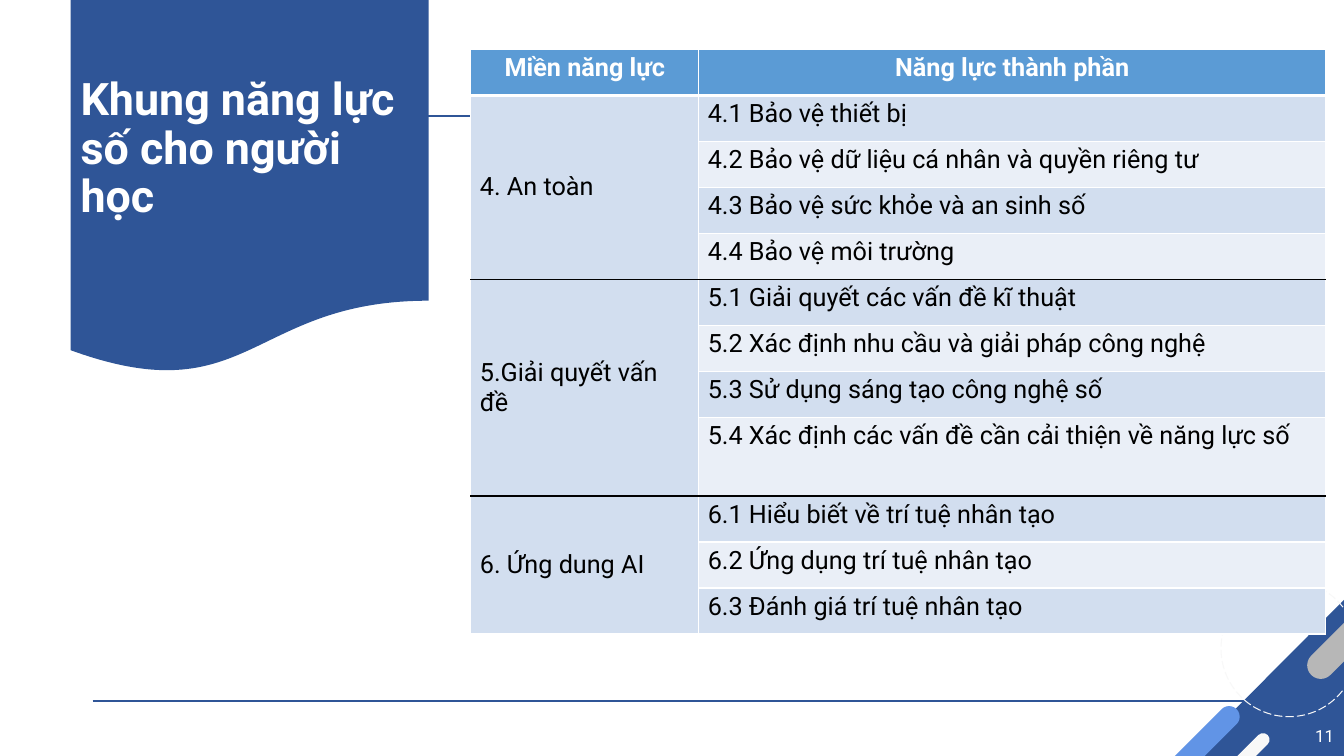
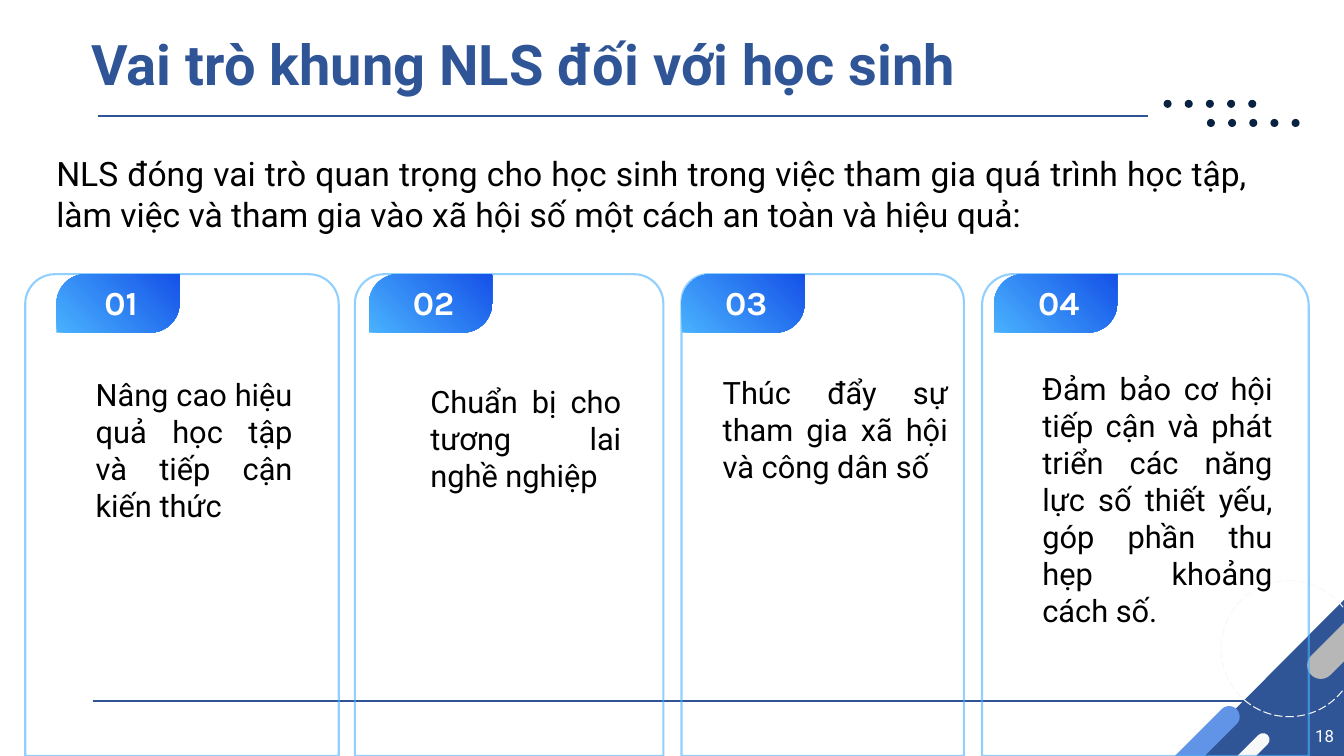
from lxml.etree import SubElement
from pptx import Presentation
from pptx.dml.color import RGBColor
from pptx.enum.dml import MSO_LINE
from pptx.enum.shapes import MSO_CONNECTOR, MSO_SHAPE
from pptx.enum.text import MSO_ANCHOR as ANCHOR, PP_ALIGN as ALIGN
from pptx.oxml.ns import qn
from pptx.util import Inches, Pt

COLORS = {
    "navy": "2F5597", "gray": "B7B7B7", "pale": "F8F8F8", "light_blue": "6194E6",
    "dot": "092241", "sky": "49B2FE", "royal": "1552E8", "white": "FFFFFF",
    "black": "000000", "header": "5B9BD5", "odd_row": "D2DEEF", "even_row": "EAEFF7",
}


def add_shape(slide, preset, box, fill=None, rotation=0, adjustments=()):
    shape = slide.shapes.add_shape(preset, *map(Inches, box))
    shape.shadow.inherit = False
    shape.rotation = rotation
    shape.line.fill.background()
    for index, value in enumerate(adjustments):
        shape.adjustments[index] = value
    if fill:
        shape.fill.solid()
        shape.fill.fore_color.rgb = RGBColor.from_string(COLORS[fill])
    else:
        shape.fill.background()
    return shape


def add_text(slide, text, box, size, color="black", bold=False, align=ALIGN.LEFT,
             anchor=ANCHOR.TOP, font="Roboto"):
    frame = slide.shapes.add_textbox(*map(Inches, box)).text_frame
    frame.word_wrap = True
    frame.vertical_anchor = anchor
    paragraph = frame.paragraphs[0]
    paragraph.text = text
    paragraph.alignment = align
    paragraph.font.name = font
    paragraph.font.size = Pt(size)
    paragraph.font.bold = bold
    paragraph.font.color.rgb = RGBColor.from_string(COLORS[color])
    return paragraph


presentation = Presentation()
presentation.slide_width = Inches(13.33)
presentation.slide_height = Inches(7.5)
layout = presentation.slide_layouts[6]
for placeholder in list(layout.placeholders):
    placeholder.element.getparent().remove(placeholder.element)

framework_slide = presentation.slides.add_slide(layout)
roles_slide = presentation.slides.add_slide(layout)

# Shared decoration: rules, corner and dots, drawn once and moved to the layout
for left, right, top in [(0.92, 12.42, 6.95), (0.97, 11.39, 1.15)]:
    rule = framework_slide.shapes.add_connector(
        MSO_CONNECTOR.STRAIGHT, Inches(left), Inches(top), Inches(right), Inches(top))
    rule.line.color.rgb = RGBColor.from_string(COLORS["navy"])
    rule.line.width = Pt(1.5)
    SubElement(rule.element.spPr, qn("a:effectLst"))

add_shape(framework_slide, MSO_SHAPE.RIGHT_TRIANGLE, (11.77, 5.91, 1.61, 1.6), "navy", 270)
for box, color in [
    ((12.83, 6.14, 1.19, 0.27), "gray"),
    ((11.3, 7.33, 1.13, 0.21), "light_blue"),
    ((11.89, 7.51, 0.8, 0.13), "pale"),
]:
    add_shape(framework_slide, MSO_SHAPE.ROUNDED_RECTANGLE, box, color, 135, [0.5])
ring = add_shape(framework_slide, MSO_SHAPE.OVAL, (12.11, 5.76, 1.35, 1.35), rotation=180)
ring.line.color.rgb = RGBColor.from_string(COLORS["pale"])
ring.line.width = Pt(0.75)
ring.line.dash_style = MSO_LINE.LONG_DASH

for row_left, row_top in [(11.54, 0.99), (11.97, 1.18)]:
    for index in range(5):
        add_shape(framework_slide, MSO_SHAPE.OVAL,
                  (row_left + 0.21 * index, row_top, 0.08, 0.08), "dot")

for shape in list(framework_slide.shapes):
    layout.shapes.element.append(shape.element)

# Page numbers
for slide, number in [(framework_slide, "11"), (roles_slide, "18")]:
    add_text(slide, number, (12.65, 7.1, 0.68, 0.4), 12, "white",
             align=ALIGN.RIGHT, anchor=ANCHOR.MIDDLE)

# Titles
add_shape(framework_slide, MSO_SHAPE.FLOWCHART_DOCUMENT, (0.7, 0, 3.55, 3.72), "navy")
for slide, title, box, size, color in [
    (framework_slide, "Khung năng lực số cho người học", (0.7, 0.19, 3.55, 2.59), 32, "white"),
    (roles_slide, "Vai trò khung NLS đối với học sinh", (0.81, 0.15, 11.5, 1.03), 40, "navy"),
]:
    paragraph = add_text(slide, title, box, size, color, bold=True, anchor=ANCHOR.MIDDLE)
    paragraph.line_spacing = 0.9

# Competence table
DOMAINS = [
    ("4. An toàn", [
        "4.1 Bảo vệ thiết bị",
        "4.2 Bảo vệ dữ liệu cá nhân và quyền riêng tư",
        "4.3 Bảo vệ sức khỏe và an sinh số",
        "4.4 Bảo vệ môi trường",
    ]),
    ("5.Giải quyết vấn đề", [
        "5.1 Giải quyết các vấn đề kĩ thuật",
        "5.2 Xác định nhu cầu và giải pháp công nghệ",
        "5.3 Sử dụng sáng tạo công nghệ số",
        "5.4 Xác định các vấn đề cần cải thiện về năng lực số",
    ]),
    ("6. Ứng dung AI", [
        "6.1 Hiểu biết về trí tuệ nhân tạo",
        "6.2 Ứng dụng trí tuệ nhân tạo",
        "6.3 Đánh giá trí tuệ nhân tạo",
    ]),
]
TABLE_HEIGHT, TALL_ROW, TALL_HEIGHT = 5.8, 8, 0.78
rows = [("Miền năng lực", "Năng lực thành phần")]
domain_spans = []
for domain, skills in DOMAINS:
    domain_spans.append((len(rows), len(rows) + len(skills) - 1))
    rows += [(domain if index == 0 else "", skill) for index, skill in enumerate(skills)]
domain_ends = [last for first, last in domain_spans[:-1]]

table = framework_slide.shapes.add_table(
    len(rows), 2, Inches(4.67), Inches(0.49), Inches(8.48), Inches(TABLE_HEIGHT)).table
for column, width in zip(table.columns, (2.26, 6.22)):
    column.width = Inches(width)
for row in table.rows:
    row.height = Inches((TABLE_HEIGHT - TALL_HEIGHT) / (len(rows) - 1))
table.rows[TALL_ROW].height = Inches(TALL_HEIGHT)

for row_index, texts in enumerate(rows):
    is_header = row_index == 0
    for column_index, text in enumerate(texts):
        cell = table.cell(row_index, column_index)
        cell.margin_left = cell.margin_right = Inches(0.09)
        cell.margin_top = cell.margin_bottom = Inches(0.04)
        if column_index == 0 and not is_header:
            cell.vertical_anchor = ANCHOR.MIDDLE
        paragraph = cell.text_frame.paragraphs[0]
        paragraph.text = text
        paragraph.alignment = ALIGN.CENTER if is_header else ALIGN.LEFT
        paragraph.font.name = "Roboto"
        paragraph.font.size = Pt(18)
        paragraph.font.bold = is_header
        paragraph.font.color.rgb = RGBColor.from_string(COLORS["white" if is_header else "black"])

        # Borders come before the fill in the cell properties
        properties = cell._tc.get_or_add_tcPr()
        top_color = "black" if row_index - 1 in domain_ends else "white"
        bottom_color = "black" if row_index in domain_ends else "white"
        for side, color, width in [
            ("L", "white", 1), ("R", "white", 1),
            ("T", top_color, 3 if row_index == 1 else 1),
            ("B", bottom_color, 3 if is_header else 1),
        ]:
            border = SubElement(properties, qn(f"a:ln{side}"), w=str(Pt(width)))
            border_fill = SubElement(border, qn("a:solidFill"))
            SubElement(border_fill, qn("a:srgbClr"), val=COLORS[color])
        fill = "header" if is_header else "odd_row" if row_index % 2 or column_index == 0 else "even_row"
        cell.fill.solid()
        cell.fill.fore_color.rgb = RGBColor.from_string(COLORS[fill])

for first, last in domain_spans:
    table.cell(first, 0).merge(table.cell(last, 0))

# Introduction to the roles
paragraph = add_text(
    roles_slide,
    "NLS đóng vai trò quan trọng cho học sinh trong việc tham gia quá trình học tập, "
    "làm việc và tham gia vào xã hội số một cách an toàn và hiệu quả:",
    (0.46, 1.47, 12.01, 1.0), 24, align=ALIGN.JUSTIFY)
paragraph.space_before = paragraph.space_after = Pt(6)

# Role cards: card left and width, text box, text
CARDS = [
    (0.25, 3.11, (0.35, 3.68, 2.65, 1.58), "Nâng cao hiệu quả học tập và tiếp cận kiến thức"),
    (3.52, 3.06, (3.67, 3.75, 2.59, 1.21), "Chuẩn bị cho tương lai nghề nghiệp"),
    (6.76, 2.8, (6.57, 3.66, 2.93, 1.21), "Thúc đẩy sự tham gia xã hội và công dân số"),
    (9.74, 3.24, (9.74, 3.62, 2.98, 2.69),
     "Đảm bảo cơ hội tiếp cận và phát triển các năng lực số thiết yếu, "
     "góp phần thu hẹp khoảng cách số."),
]
for index, (left, width, text_box, text) in enumerate(CARDS):
    card = add_shape(roles_slide, MSO_SHAPE.ROUND_2_SAME_RECTANGLE,
                     (left, 2.72, width, 4.78), adjustments=[0.095, 0])
    card.line.color.rgb = RGBColor.from_string(COLORS["sky"])
    card.line.width = Pt(1.5)
    line_color = card.element.spPr.find(qn("a:ln")).find(".//" + qn("a:srgbClr"))
    SubElement(line_color, qn("a:alpha"), val="60000")

    tab_left = 0.56 + 3.1 * index
    tab = add_shape(roles_slide, MSO_SHAPE.ROUND_2_DIAG_RECTANGLE,
                    (tab_left, 2.72, 1.22, 0.58), adjustments=[0.5, 0])
    tab.fill.gradient()
    tab.fill.gradient_angle = 45
    for stop, color in zip(tab.fill.gradient_stops, ("sky", "royal")):
        stop.color.rgb = RGBColor.from_string(COLORS[color])
    add_text(roles_slide, f"{index + 1:02}", (tab_left + 0.3, 2.75, 0.68, 0.4), 24, "white",
             bold=True, align=ALIGN.CENTER, font="Karla")

    paragraph = add_text(roles_slide, text, text_box, 22, align=ALIGN.JUSTIFY)
    paragraph.space_before = paragraph.space_after = Pt(6)
    paragraph_properties = paragraph._p.get_or_add_pPr()
    paragraph_properties.set("marL", str(Inches(0.5)))
    paragraph_properties.set("indent", "0")

presentation.save("out.pptx")
